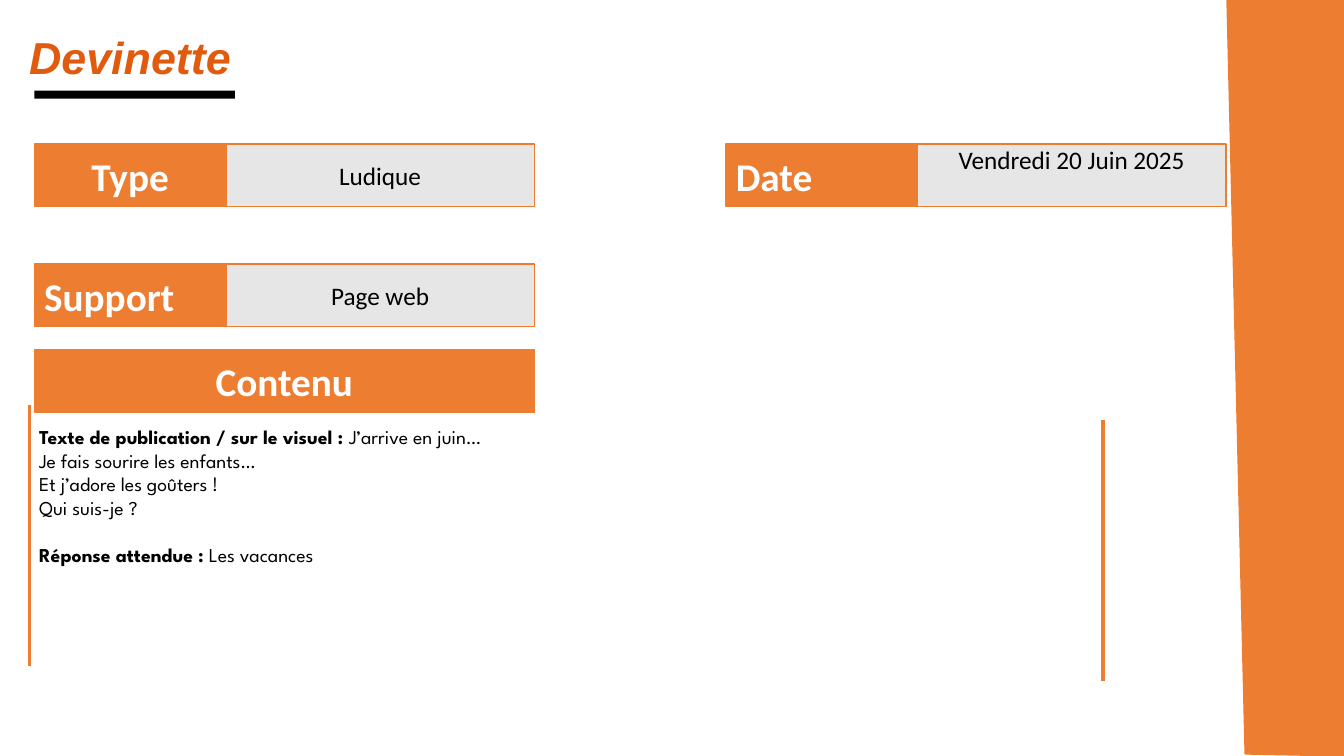
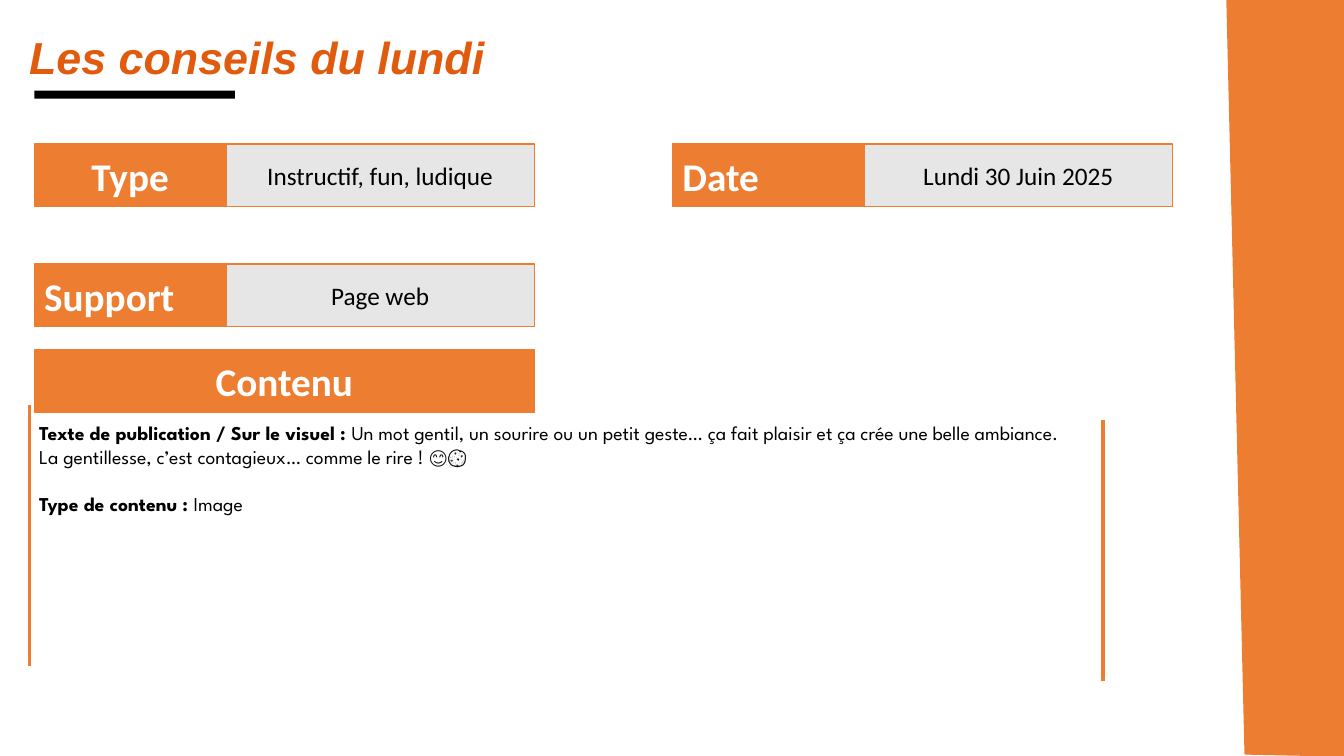
from dataclasses import dataclass

from lxml import etree
from pptx import Presentation
from pptx.dml.color import RGBColor
from pptx.enum.shapes import MSO_CONNECTOR, MSO_SHAPE
from pptx.enum.text import MSO_ANCHOR, MSO_AUTO_SIZE, PP_ALIGN
from pptx.oxml.ns import qn
from pptx.shapes.autoshape import Shape
from pptx.slide import Slide
from pptx.text.text import TextFrame, _Paragraph
from pptx.util import Inches, Pt

ORANGE = RGBColor(0xED, 0x7D, 0x31)
TITLE_ORANGE = RGBColor(0xE1, 0x5B, 0x0F)
GREY = RGBColor(0xE7, 0xE6, 0xE6)
BLACK = RGBColor(0x00, 0x00, 0x00)
WHITE = RGBColor(0xFF, 0xFF, 0xFF)

LEFT = 0.34
LABEL_W = 1.9
VALUE_W = 3.06
ROW_H = 0.62
TOP_ROW = 1.43
SUPPORT_ROW = 2.62
CONTENT_ROW = 3.47
RULE_H = 2.59
BAND = [(12.17, 0), (13.33, 0), (13.33, 7.5), (12.35, 7.48)]


@dataclass(frozen=True)
class Line:
    """One paragraph of the content: a bold lead-in, then plain text."""
    text: str
    lead: str = ""
    space_before: float = 0


@dataclass(frozen=True)
class Post:
    title: str
    kind: str
    date: str
    date_left: float
    body_top: float
    body_w: float
    body_h: float
    lines: list[Line]
    date_on_top: bool = False


POSTS = [
    Post("Devinette", "Ludique", "Vendredi 20 Juin 2025", 7.2, 4.17, 10.42, 1.75, [
        Line("J’arrive en juin…", "Texte de publication / sur le visuel : "),
        Line("Je fais sourire les enfants…"),
        Line("Et j’adore les goûters !"),
        Line("Qui suis-je ?"),
        Line(" Les vacances", "Réponse attendue :", space_before=17),
    ], date_on_top=True),
    Post("Les conseils du lundi", "Instructif, fun, ludique", "Lundi 30 Juin 2025",
         6.67, 4.13, 10.74, 1.28, [
             Line("Un mot gentil, un sourire ou un petit geste… ça fait plaisir "
                  "et ça crée une belle ambiance.",
                  "Texte de publication / Sur le visuel : "),
             Line("La gentillesse, c’est contagieux… comme le rire ! 😊🍪"),
             Line("Image", "Type de contenu : ", space_before=17),
         ]),
]


def add_text(p: _Paragraph, text: str, *, size: float, font: str = "Calibri",
             color: RGBColor = BLACK, bold: bool = False, italic: bool = False) -> None:
    r = p.add_run()
    r.text = text
    r.font.name = font
    r.font.size = Pt(size)
    r.font.color.rgb = color
    r.font.bold = bold
    r.font.italic = italic


def paint(sp: Shape, fill: RGBColor, line: RGBColor | None = None) -> None:
    sp.shadow.inherit = False
    sp.fill.solid()
    sp.fill.fore_color.rgb = fill
    if line is None:
        sp.line.fill.background()
    else:
        sp.line.color.rgb = line
        sp.line.width = Pt(1)


def add_box(s: Slide, x: float, y: float, w: float, h: float, fill: RGBColor,
            line: RGBColor | None = None) -> Shape:
    sp = s.shapes.add_shape(MSO_SHAPE.RECTANGLE, Inches(x), Inches(y), Inches(w), Inches(h))
    paint(sp, fill, line)
    return sp


def add_label(s: Slide, x: float, y: float, text: str, *, w: float = LABEL_W,
              align: PP_ALIGN = PP_ALIGN.LEFT) -> None:
    sp = add_box(s, x, y, w, ROW_H, ORANGE, ORANGE)
    p = sp.text_frame.paragraphs[0]
    p.alignment = align
    add_text(p, text, size=28, color=WHITE, bold=True)


def add_field(s: Slide, x: float, y: float, label: str, value: str, *,
              align: PP_ALIGN = PP_ALIGN.LEFT, on_top: bool = False) -> None:
    """Draw an orange label with its grey value to the right."""
    sp = add_box(s, x + LABEL_W, y, VALUE_W, ROW_H, GREY, ORANGE)
    tf = sp.text_frame
    if on_top:
        tf.vertical_anchor = MSO_ANCHOR.TOP
        tf.margin_top = 0
    p = tf.paragraphs[0]
    p.alignment = PP_ALIGN.CENTER
    add_text(p, value, size=18)
    add_label(s, x, y, label, align=align)


def add_rule(s: Slide, x: float, y: float) -> None:
    """Draw a vertical orange line beside the content."""
    cx = s.shapes.add_connector(MSO_CONNECTOR.STRAIGHT, Inches(x), Inches(y),
                                Inches(x), Inches(y + RULE_H))
    cx.line.color.rgb = ORANGE
    cx.line.width = Pt(2.25)
    etree.SubElement(cx._element.spPr, qn("a:effectLst"))


def add_text_box(s: Slide, x: float, y: float, w: float, h: float) -> TextFrame:
    tf = s.shapes.add_textbox(Inches(x), Inches(y), Inches(w), Inches(h)).text_frame
    tf.word_wrap = True
    return tf


def add_band(s: Slide) -> None:
    start, *others = [(Inches(x), Inches(y)) for x, y in BAND]
    builder = s.shapes.build_freeform(*start)
    builder.add_line_segments(others, close=True)
    paint(builder.convert_to_shape(), ORANGE, ORANGE)


def add_title(s: Slide, title: str) -> None:
    add_box(s, LEFT, 0.9, 1.99, 0.08, BLACK)
    p = add_text_box(s, 0.19, 0.25, 11.03, 0.52).paragraphs[0]
    p.alignment = PP_ALIGN.JUSTIFY
    add_text(p, title, size=32, font="Arial", color=TITLE_ORANGE, bold=True, italic=True)


def add_body(s: Slide, post: Post) -> None:
    tf = add_text_box(s, 0.29, post.body_top, post.body_w, post.body_h)
    tf.auto_size = MSO_AUTO_SIZE.SHAPE_TO_FIT_TEXT
    for i, line in enumerate(post.lines):
        p = tf.add_paragraph() if i else tf.paragraphs[0]
        p.space_before = Pt(line.space_before)
        if line.lead:
            add_text(p, line.lead, size=14, font="League Spartan", bold=True)
        add_text(p, line.text, size=14, font="League Spartan")


def add_post(prs: Presentation, post: Post) -> None:
    s = prs.slides.add_slide(prs.slide_layouts[6])
    add_band(s)
    add_title(s, post.title)
    add_field(s, LEFT, TOP_ROW, "Type", post.kind, align=PP_ALIGN.CENTER)
    add_field(s, post.date_left, TOP_ROW, "Date", post.date, on_top=post.date_on_top)
    add_field(s, LEFT, SUPPORT_ROW, "Support", "Page web")
    add_rule(s, 0.29, 4.02)
    add_label(s, LEFT, CONTENT_ROW, "Contenu", w=LABEL_W + VALUE_W, align=PP_ALIGN.CENTER)
    add_rule(s, 10.94, 4.17)
    add_body(s, post)


def main() -> None:
    prs = Presentation()
    prs.slide_width = Inches(13.33)
    prs.slide_height = Inches(7.5)
    for post in POSTS:
        add_post(prs, post)
    prs.save("out.pptx")


if __name__ == "__main__":
    main()
